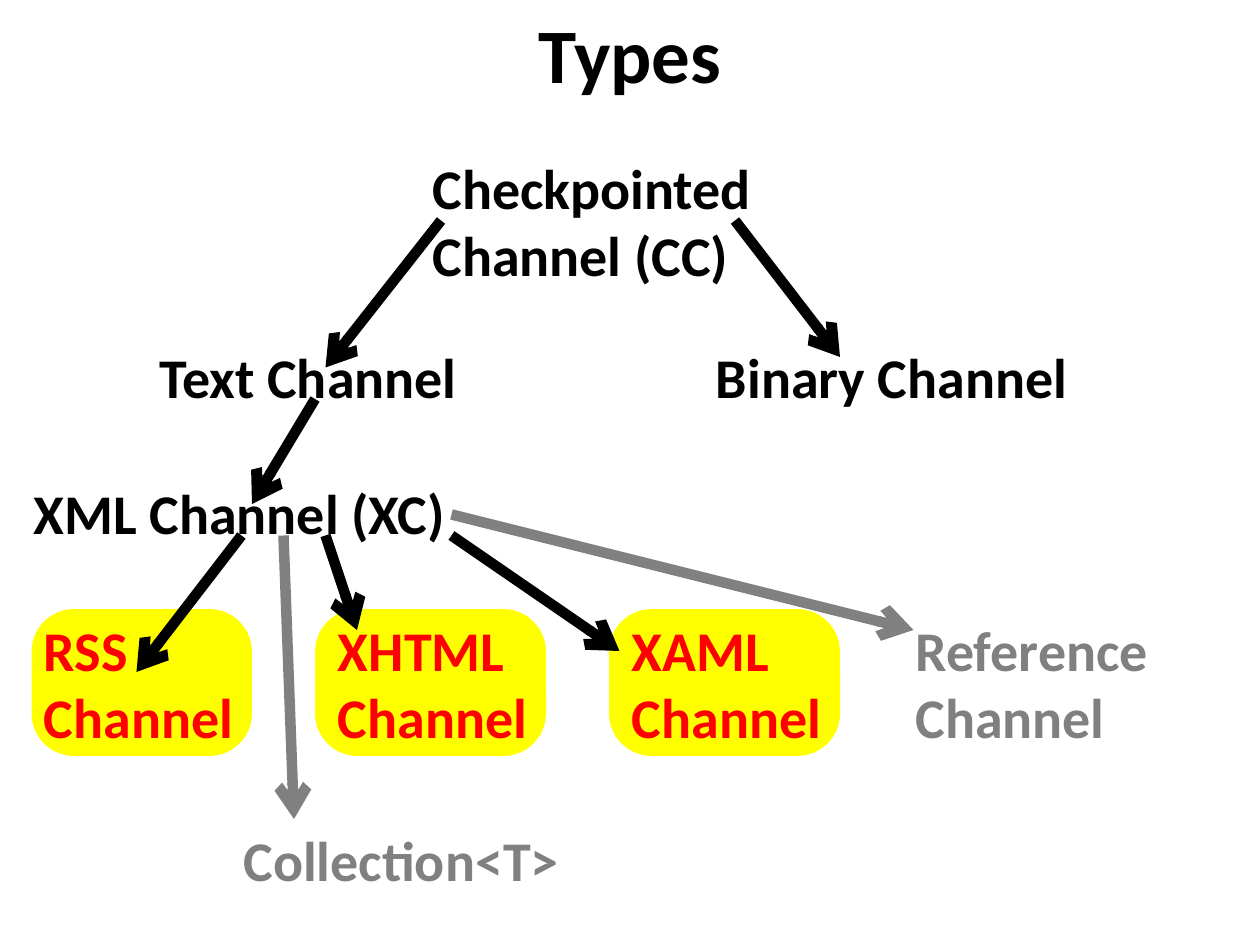
"""Builds the "Types" slide: a hierarchy of channel types joined by arrows."""
from dataclasses import dataclass

from lxml import etree
from pptx import Presentation
from pptx import util as u
from pptx.dml import color
from pptx.enum import shapes, text
from pptx.oxml import ns


@dataclass(frozen=True)
class Theme:
    """Colours, font and type sizes of the slide."""
    ink: str = "000000"
    muted: str = "808080"
    accent: str = "FF0000"
    highlight: str = "FFFF00"
    font: str = "Calibri"
    title_size: int = 44
    label_size: int = 32
    arrow_width: int = 6


THEME = Theme()
ROW_TOP, LABEL_HEIGHT = 348, 48

HIGHLIGHTS = [(348, 132), (180, 132), (18, 126)]

LABELS = [
    ("Checkpointed Channel (CC)", 240, 84, 198, 90, THEME.ink),
    ("Text Channel", 84, 192, 198, LABEL_HEIGHT, THEME.ink),
    ("Binary Channel", 402, 192, 234, LABEL_HEIGHT, THEME.ink),
    ("XML Channel (XC)", 12, 270, 264, LABEL_HEIGHT, THEME.ink),
    ("RSS Channel", 18, ROW_TOP, 126, LABEL_HEIGHT, THEME.accent),
    ("XHTML Channel", 186, ROW_TOP, 132, LABEL_HEIGHT, THEME.accent),
    ("XAML Channel", 354, ROW_TOP, 132, LABEL_HEIGHT, THEME.accent),
    ("Reference Channel", 516, ROW_TOP, 192, LABEL_HEIGHT, THEME.muted),
    ("Collection<T>", 132, 468, 198, LABEL_HEIGHT, THEME.muted),
]

ARROWS = [
    ((186, 210), (252, 126), THEME.ink),
    ((480, 204), (420, 126), THEME.ink),
    ((144, 288), (180, 228), THEME.ink),
    ((78, 384), (138, 306), THEME.ink),
    ((204, 360), (186, 306), THEME.ink),
    ((354, 372), (258, 306), THEME.ink),
    ((522, 360), (258, 294), THEME.muted),
    ((168, 468), (162, 306), THEME.muted),
]


def rgb(code):
    """Return the colour for a hex code."""
    return color.RGBColor.from_string(code)


def apply(target, values):
    """Set every attribute in values on target."""
    for name, value in values.items():
        setattr(target, name, value)


def write(holder, wording, size, ink, align):
    """Put one bold paragraph into a text holder."""
    frame = holder.text_frame
    apply(frame, {"word_wrap": True, "auto_size": text.MSO_AUTO_SIZE.NONE,
                  "vertical_anchor": text.MSO_ANCHOR.TOP})
    paragraph = frame.paragraphs[0]
    paragraph.alignment = align
    run = paragraph.add_run()
    run.text = wording
    apply(run.font, {"name": THEME.font, "size": u.Pt(size), "bold": True})
    run.font.color.rgb = rgb(ink)


def set_title(slide, wording):
    """Place and format the title placeholder."""
    title = slide.shapes.title
    apply(title, {"left": u.Pt(0), "top": u.Pt(0),
                  "width": u.Pt(720), "height": u.Pt(90)})
    write(title, wording, THEME.title_size, THEME.ink, text.PP_ALIGN.CENTER)


def add_highlight(slide, left, width):
    """Add a rounded patch behind a channel of the bottom row."""
    patch = slide.shapes.add_shape(
        shapes.MSO_SHAPE.ROUNDED_RECTANGLE,
        u.Pt(left), u.Pt(ROW_TOP), u.Pt(width), u.Pt(84))
    patch.adjustments[0] = 0.29
    patch.shadow.inherit = False
    patch.fill.solid()
    patch.fill.fore_color.rgb = rgb(THEME.highlight)
    patch.line.fill.background()


def add_label(slide, wording, left, top, width, height, ink):
    """Add the name of a channel type."""
    label = slide.shapes.add_textbox(*map(u.Pt, (left, top, width, height)))
    write(label, wording, THEME.label_size, ink, text.PP_ALIGN.LEFT)


def add_arrow(slide, child, parent, ink):
    """Add a line whose arrowhead sits at the child end."""
    arrow = slide.shapes.add_connector(
        shapes.MSO_CONNECTOR.STRAIGHT, *map(u.Pt, child + parent))
    arrow.line.color.rgb = rgb(ink)
    arrow.line.width = u.Pt(THEME.arrow_width)
    outline = arrow.line._get_or_add_ln()
    etree.SubElement(outline, ns.qn("a:headEnd"), type="arrow")
    etree.SubElement(arrow._element.spPr, ns.qn("a:effectLst"))


def main():
    """Build the slide and save it."""
    deck = Presentation()
    apply(deck, {"slide_width": u.Pt(720), "slide_height": u.Pt(540)})
    slide = deck.slides.add_slide(deck.slide_layouts[5])
    set_title(slide, "Types")
    for add, rows in ((add_highlight, HIGHLIGHTS), (add_label, LABELS),
                      (add_arrow, ARROWS)):
        for row in rows:
            add(slide, *row)
    deck.save("out.pptx")


if __name__ == "__main__":
    main()
